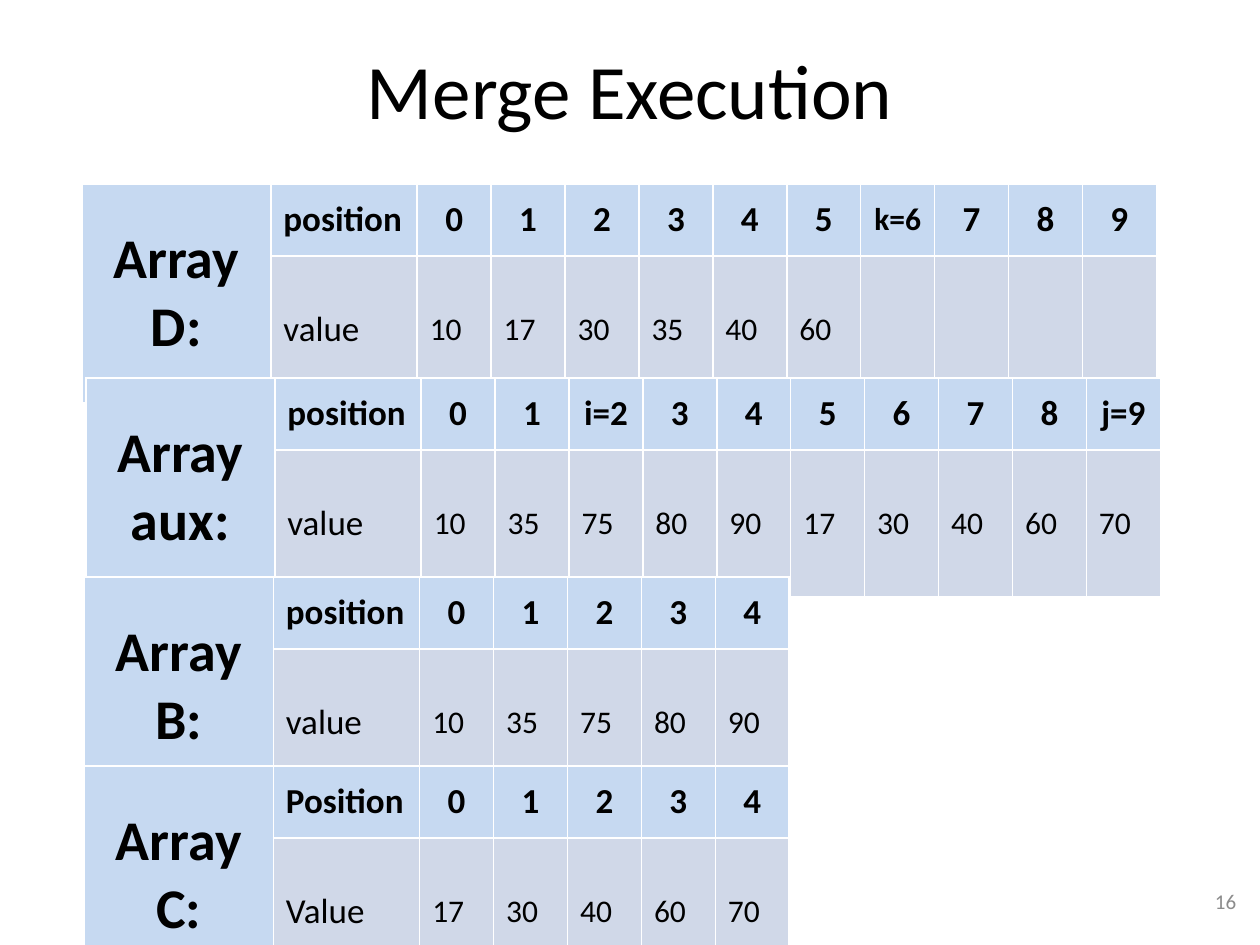
import dataclasses

import pptx
import pptx.dml.color
import pptx.enum.text
import pptx.slide
import pptx.text.text
import pptx.util

Cm = pptx.util.Cm
Align = pptx.enum.text.PP_ALIGN
Middle = pptx.enum.text.MSO_ANCHOR.MIDDLE


@dataclasses.dataclass(frozen=True)
class Theme:
    font: str = "Calibri"
    ink: str = "000000"
    gray: str = "8C8C8C"
    head: str = "C6D9F1"
    body: str = "D0D8E8"
    title: int = 44
    label: int = 32
    index: int = 20
    value: int = 18
    page: int = 12


@dataclasses.dataclass(frozen=True)
class Array:
    label: str
    left: float
    top: float
    keys: list[str]
    values: list[str]


THEME = Theme()
WIDTHS = (3.81, 2.95)
SLOT = 1.49
ROWS = (1.45, 1.04)
FRAME = 2.97

ARRAYS = [
    Array("Array D:", 1.65, 3.71, "position 0 1 2 3 4 5 k=6 7 8 9".split(),
          "value 10 17 30 35 40 60".split()),
    Array("Array aux:", 1.73, 7.62, "position 0 1 i=2 3 4 5 6 7 8 j=9".split(),
          "value 10 35 75 80 90 17 30 40 60 70".split()),
    Array("Array B:", 1.7, 11.63, "position 0 1 2 3 4".split(),
          "value 10 35 75 80 90".split()),
    Array("Array C:", 1.7, 15.44, "Position 0 1 2 3 4".split(),
          "Value 17 30 40 60 70".split()),
]


def color(code: str) -> pptx.dml.color.RGBColor:
    return pptx.dml.color.RGBColor.from_string(code)


def write(frame: pptx.text.text.TextFrame, text: str, size: int,
          align: Align, bold: bool = False, ink: str = THEME.ink) -> None:
    frame.text = text
    para = frame.paragraphs[0]
    para.alignment = align
    para.font.name = THEME.font
    para.font.size = pptx.util.Pt(size)
    para.font.bold = bold
    para.font.color.rgb = color(ink)


def add_text(slide: pptx.slide.Slide, box: tuple[float, ...], text: str,
             size: int, align: Align, ink: str = THEME.ink) -> None:
    frame = slide.shapes.add_textbox(*map(Cm, box)).text_frame
    frame.word_wrap = True
    frame.vertical_anchor = Middle
    write(frame, text, size, align, ink=ink)


def add_array(slide: pptx.slide.Slide, array: Array) -> None:
    """Draw a label beside a row of positions and a row of values."""
    slots = len(array.keys) - 1
    widths = [*WIDTHS, *[SLOT] * slots]
    shape = slide.shapes.add_table(
        2, len(widths), Cm(array.left), Cm(array.top),
        Cm(sum(widths)), Cm(FRAME))
    table = shape.table
    for column, width in zip(table.columns, widths):
        column.width = Cm(width)
    for row, height in zip(table.rows, ROWS):
        row.height = Cm(height)
    shape.height = Cm(FRAME)

    for cell in table.iter_cells():
        cell.vertical_anchor = Middle
        cell.fill.solid()
        cell.fill.fore_color.rgb = color(THEME.body)
    for cell in table.rows[0].cells:
        cell.fill.fore_color.rgb = color(THEME.head)

    label = table.cell(0, 0)
    label.merge(table.cell(1, 0))
    write(label.text_frame, array.label, THEME.label, Align.CENTER, True)
    for col, key in enumerate(array.keys, 1):
        align = Align.LEFT if col == 1 else Align.CENTER
        size = THEME.value if key == "k=6" else THEME.index
        write(table.cell(0, col).text_frame, key, size, align, True)
    for col, value in enumerate(array.values, 1):
        size = THEME.index if col == 1 else THEME.value
        write(table.cell(1, col).text_frame, value, size, Align.LEFT)


def main() -> None:
    deck = pptx.Presentation()
    deck.slide_width, deck.slide_height = Cm(25.4), Cm(19.05)
    slide = deck.slides.add_slide(deck.slide_layouts[6])
    add_text(slide, (1.27, 0.2, 22.86, 3.18), "Merge Execution",
             THEME.title, Align.CENTER)
    add_text(slide, (19.25, 17.65, 5.92, 1.02), "16",
             THEME.page, Align.RIGHT, THEME.gray)
    for array in ARRAYS:
        add_array(slide, array)
    deck.save("out.pptx")


if __name__ == "__main__":
    main()
